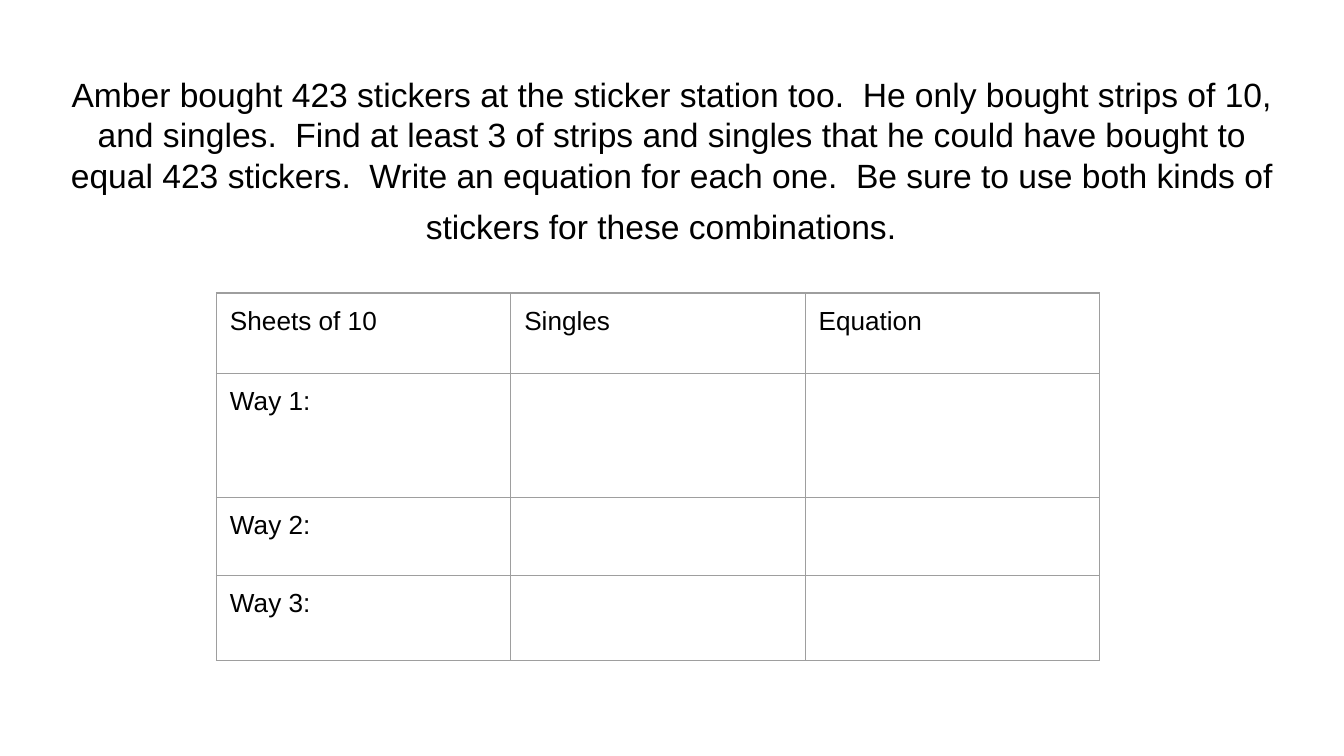
from dataclasses import dataclass

from lxml import etree
from pptx import Presentation
from pptx.dml.color import RGBColor
from pptx.enum import text
from pptx.oxml import ns
from pptx.util import Pt

COLORS = {"text": "000000", "border": "9E9E9E"}
FONT = "Arial"
INSET = Pt(7.2)
COLUMN_WIDTH = 157.68
TABLE_LEFT, TABLE_TOP = 116, 157

PROBLEM = (
    "Amber bought 423 stickers at the sticker station too.  He only bought "
    "strips of 10, and singles.  Find at least 3 of strips and singles that he "
    "could have bought to equal 423 stickers.  Write an equation for each one.  "
    "Be sure to use both kinds of stickers for these combinations. "
)


@dataclass
class TableRow:
    height: float
    labels: tuple[str, str, str]


ROWS = [
    TableRow(43, ("Sheets of 10", "Singles", "Equation")),
    TableRow(66.4, ("Way 1:", "", "")),
    TableRow(41.8, ("Way 2:", "", "")),
    TableRow(45.6, ("Way 3:", "", "")),
]


def format_font(font, size: float) -> None:
    font.name = FONT
    font.size = Pt(size)
    font.bold = False
    font.color.rgb = RGBColor.from_string(COLORS["text"])


def set_insets(holder) -> None:
    holder.margin_left = holder.margin_right = INSET
    holder.margin_top = holder.margin_bottom = INSET


def add_borders(cell, width: float) -> None:
    properties = cell._tc.get_or_add_tcPr()
    for index, side in enumerate(("lnL", "lnR", "lnT", "lnB")):
        line = etree.Element(ns.qn(f"a:{side}"), w=str(Pt(width)))
        fill = etree.SubElement(line, ns.qn("a:solidFill"))
        etree.SubElement(fill, ns.qn("a:srgbClr"), val=COLORS["border"])
        properties.insert(index, line)


def write_title(slide) -> None:
    title = slide.shapes.title
    title.left, title.top = Pt(24.5), Pt(22.5)
    title.width, title.height = Pt(671), Pt(118)
    frame = title.text_frame
    frame.word_wrap = True
    frame.auto_size = text.MSO_AUTO_SIZE.NONE
    frame.vertical_anchor = text.MSO_ANCHOR.BOTTOM
    set_insets(frame)
    paragraph = frame.paragraphs[0]
    paragraph.alignment = text.PP_ALIGN.CENTER
    paragraph.space_before = Pt(0)
    # The larger closing space makes the last line taller
    for words, size in ((PROBLEM, 18), (" ", 24)):
        run = paragraph.add_run()
        run.text = words
        format_font(run.font, size)


def add_ways_table(slide, rows: list[TableRow]) -> None:
    column_count = len(rows[0].labels)
    table = slide.shapes.add_table(
        len(rows), column_count, Pt(TABLE_LEFT), Pt(TABLE_TOP),
        Pt(COLUMN_WIDTH * column_count), Pt(sum(row.height for row in rows)),
    ).table
    table.first_row = table.horz_banding = False
    for column in table.columns:
        column.width = Pt(COLUMN_WIDTH)
    for row_index, row in enumerate(rows):
        table.rows[row_index].height = Pt(row.height)
        for column_index, label in enumerate(row.labels):
            cell = table.cell(row_index, column_index)
            cell.text = label
            cell.fill.background()
            set_insets(cell)
            format_font(cell.text_frame.paragraphs[0].font, 14)
            add_borders(cell, 0.75)


def main() -> None:
    presentation = Presentation()
    presentation.slide_width, presentation.slide_height = Pt(720), Pt(405)
    slide = presentation.slides.add_slide(presentation.slide_layouts[0])

    # Only the title placeholder is used
    subtitle = slide.placeholders[1].element
    subtitle.getparent().remove(subtitle)

    write_title(slide)
    add_ways_table(slide, ROWS)
    presentation.save("out.pptx")


if __name__ == "__main__":
    main()
